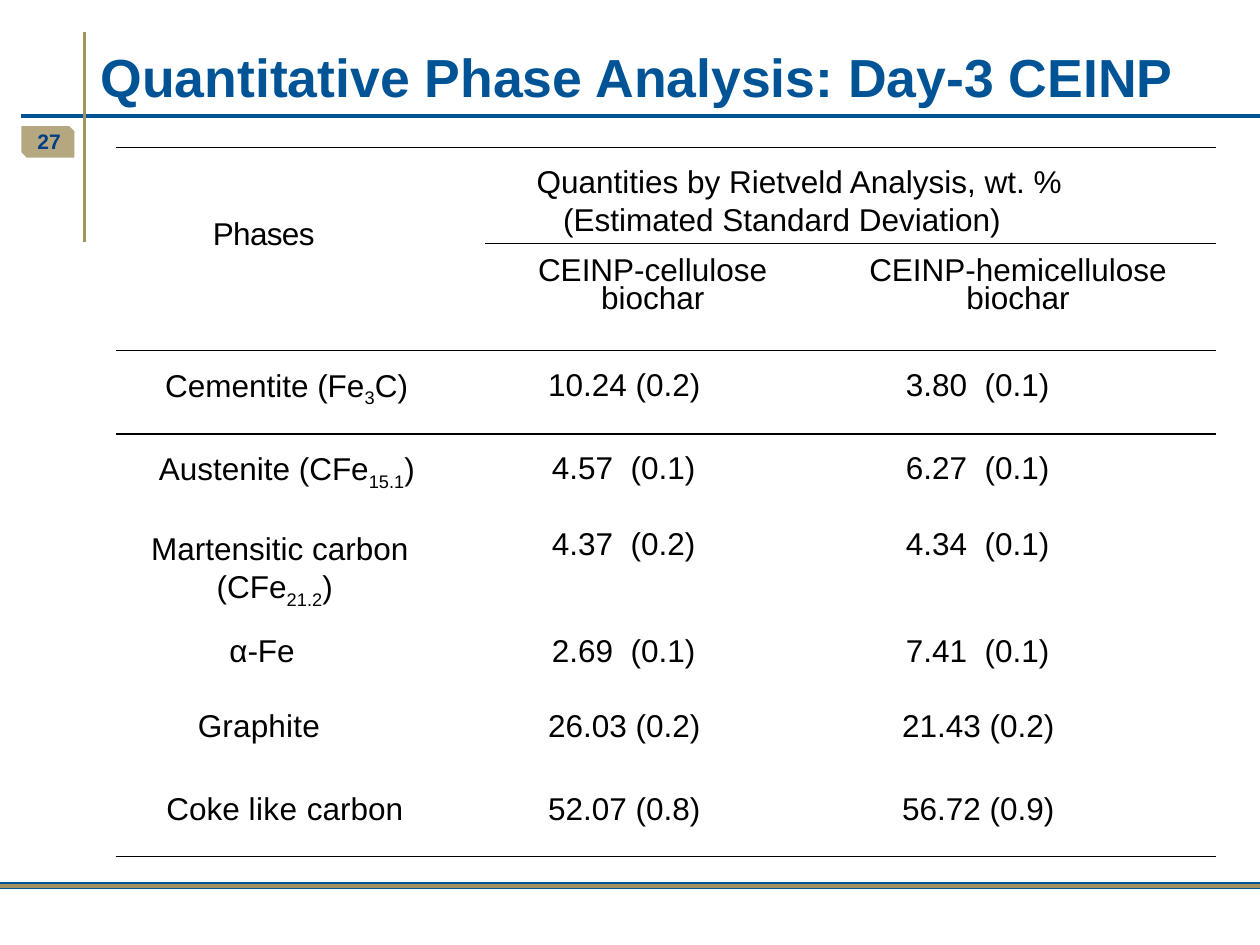
"""Build the phase analysis slide with its table of weight percentages."""
from dataclasses import dataclass

from lxml import etree
from pptx import Presentation
from pptx.dml import color
from pptx.enum import shapes, text
from pptx.oxml import ns, parse_xml
from pptx.util import Inches, Pt


@dataclass(frozen=True)
class Theme:
    """Colours, font and type sizes of the slide."""
    blue: str = "005496"
    rule_blue: str = "005293"
    number_blue: str = "003F87"
    tan: str = "A39161"
    ink: str = "000000"
    font: str = "Arial"
    title: float = 30.6
    body: float = 18
    number: float = 12


THEME = Theme()
COLUMNS = (2.93, 2.66, 3.14)
ROWS = (0.71, 0.84, 0.66, 0.6, 0.8, 0.6, 0.66, 0.65)
TOP_MARGIN = 0.12
NO_GRID = "{2D5ABB26-0587-4C30-8999-92F81FD0307C}"
SUB = {"baseline": -25000}
WIDE = {"spc": 500}
PHASES = (
    ([(0.39, [("Cementite (Fe", {}), ("3", SUB), ("C)", {})])],
     "10.24 (0.2)", "3.80 (0.1)"),
    ([(0.34, [("Austenite (CFe", {}), ("15.1", SUB), (")", {})])],
     "4.57 (0.1)", "6.27 (0.1)"),
    ([(0.28, [("Martensitic carbon", {})]),
      (0.8, [("(CFe", {}), ("21.2", SUB), (")", {})])],
     "4.37 (0.2)", "4.34 (0.1)"),
    ([(0.9, [("α-Fe", {})])], "2.69 (0.1)", "7.41 (0.1)"),
    ([(0.65, [("Graphite", {"spc": 10})])], "26.03 (0.2)", "21.43 (0.2)"),
    ([(0.4, [("Coke ", {}), ("like ", {"spc": 25}), ("carbon", {})])],
     "52.07 (0.8)", "56.72 (0.9)"),
)


def rgb(value):
    """Turn a hex string into a colour."""
    return color.RGBColor.from_string(value)


def style_font(font, size, hue, bold=False):
    """Apply the theme font with a size and colour."""
    font.name, font.size, font.bold = THEME.font, Pt(size), bold
    font.color.rgb = rgb(hue)


def add_rule(page, start, end, hue, width):
    """Draw a straight line without a shadow."""
    rule = page.shapes.add_connector(
        shapes.MSO_CONNECTOR.STRAIGHT, *map(Inches, start + end))
    rule.line.color.rgb, rule.line.width = rgb(hue), Pt(width)
    etree.SubElement(rule._element.spPr, ns.qn("a:effectLst"))


def add_label(page, place, words, size, hue, anchor, align):
    """Add a bold one-line text box."""
    frame = page.shapes.add_textbox(*map(Inches, place)).text_frame
    frame.word_wrap, frame.vertical_anchor = True, anchor
    frame.text = words
    para = frame.paragraphs[0]
    para.alignment = align
    style_font(para.runs[0].font, size, hue, True)


def add_tab(page):
    """Add the translucent tab behind the page number."""
    tab = page.shapes.add_shape(
        shapes.MSO_SHAPE.SNIP_2_DIAG_RECTANGLE, *map(Inches, (0.17, 1, 0.42, 0.25)))
    tab.shadow.inherit = False
    tab.line.fill.background()
    tab.fill.solid()
    tab.fill.fore_color.rgb = rgb(THEME.tan)
    hue = tab._element.spPr.find(".//" + ns.qn("a:srgbClr"))
    etree.SubElement(hue, ns.qn("a:alpha"), val="80000")


def fill_cell(cell, lines, top=TOP_MARGIN, spacing=1.07, align=None):
    """Write lines of (indent, spans) into a cell."""
    cell.margin_left = cell.margin_right = cell.margin_bottom = 0
    cell.margin_top = Inches(top)
    frame = cell.text_frame
    for index, (indent, spans) in enumerate(lines):
        para = frame.add_paragraph() if index else frame.paragraphs[0]
        para.line_spacing, para.alignment = spacing, align
        para._p.get_or_add_pPr().set("marL", str(Inches(indent)))
        for words, attributes in spans:
            span = para.add_run()
            span.text = words
            style_font(span.font, THEME.body, THEME.ink)
            for name, value in attributes.items():
                span._r.get_or_add_rPr().set(name, str(value))


def fill_value(cell, value, long_indent, short_indent):
    """Write a quantity with its deviation, widening the gap after short ones."""
    amount, deviation = value.split()
    short = len(amount) == 4
    spans = [(amount, {}), (" ", WIDE if short else {}), (deviation, {})]
    fill_cell(cell, [(short_indent if short else long_indent, spans)])


def set_borders(cell, *sides):
    """Draw thin lines on the given sides of a cell, in schema order."""
    for index, side in enumerate(sides):
        cell._tc.get_or_add_tcPr().insert(index, parse_xml(
            f'<a:ln{side} {ns.nsdecls("a")} w="12700"><a:solidFill>'
            f'<a:srgbClr val="{THEME.ink}"/></a:solidFill></a:ln{side}>'))


def add_phase_table(page):
    """Add the table of phases and their quantities."""
    place = (0.92, 1.17, sum(COLUMNS), sum(ROWS))
    table = page.shapes.add_table(
        len(ROWS), len(COLUMNS), *map(Inches, place)).table
    table._tbl.tblPr.find(ns.qn("a:tableStyleId")).text = NO_GRID
    table.first_row = table.horz_banding = False
    for column, width in zip(table.columns, COLUMNS):
        column.width = Inches(width)
    for row, height in zip(table.rows, ROWS):
        row.height = Inches(height)
    for cell in table.iter_cells():
        cell.fill.background()
    table.cell(0, 0).merge(table.cell(1, 0))
    table.cell(0, 1).merge(table.cell(0, 2))
    fill_cell(table.cell(0, 0), [(0.77, [("Phases", {"spc": -40})])], top=0.53)
    fill_cell(table.cell(0, 1), [
        (0.41, [("Quantities by Rietveld Analysis, wt. %", {})]),
        (0.62, [("(Estimated Standard Deviation)", {})])])
    for column, sample in enumerate(("CEINP-cellulose", "CEINP-hemicellulose"), 1):
        fill_cell(table.cell(1, column),
                  [(0, [(sample, {})]), (0, [("biochar", {})])],
                  top=0.13, spacing=Pt(16), align=text.PP_ALIGN.CENTER)
    for row, (phase, cellulose, hemicellulose) in enumerate(PHASES, 2):
        fill_cell(table.cell(row, 0), phase,
                  top=TOP_MARGIN + 0.04 * (len(phase) - 1))
        fill_value(table.cell(row, 1), cellulose, 0.5, 0.53)
        fill_value(table.cell(row, 2), hemicellulose, 0.65, 0.68)
    for column in range(len(COLUMNS)):
        set_borders(table.cell(0, column), *("TB" if column else "T"))
        set_borders(table.cell(1, column), *("TB" if column else "B"))
        set_borders(table.cell(2, column), "T")
        set_borders(table.cell(len(ROWS) - 1, column), "B")


def main():
    """Build and save the slide."""
    deck = Presentation()
    deck.slide_width, deck.slide_height = Inches(10), Inches(7.5)
    page = deck.slides.add_slide(deck.slide_layouts[6])
    add_tab(page)
    add_rule(page, (0.17, 0.92), (10, 0.92), THEME.blue, 2)
    add_rule(page, (0.67, 1.92), (0.67, 0.25), THEME.tan, 2)
    add_label(page, (0, 0.92, 0.58, 0.4), "27", THEME.number, THEME.number_blue,
              text.MSO_ANCHOR.MIDDLE, text.PP_ALIGN.RIGHT)
    for hue, width in ((THEME.rule_blue, 4), (THEME.tan, 2)):
        add_rule(page, (0, 7.03), (10, 7.03), hue, width)
    add_label(page, (0.7, -0.01, 9.3, 0.92),
              "Quantitative Phase Analysis: Day-3 CEINP", THEME.title, THEME.blue,
              text.MSO_ANCHOR.BOTTOM, text.PP_ALIGN.LEFT)
    add_phase_table(page)
    deck.save("out.pptx")


if __name__ == "__main__":
    main()
